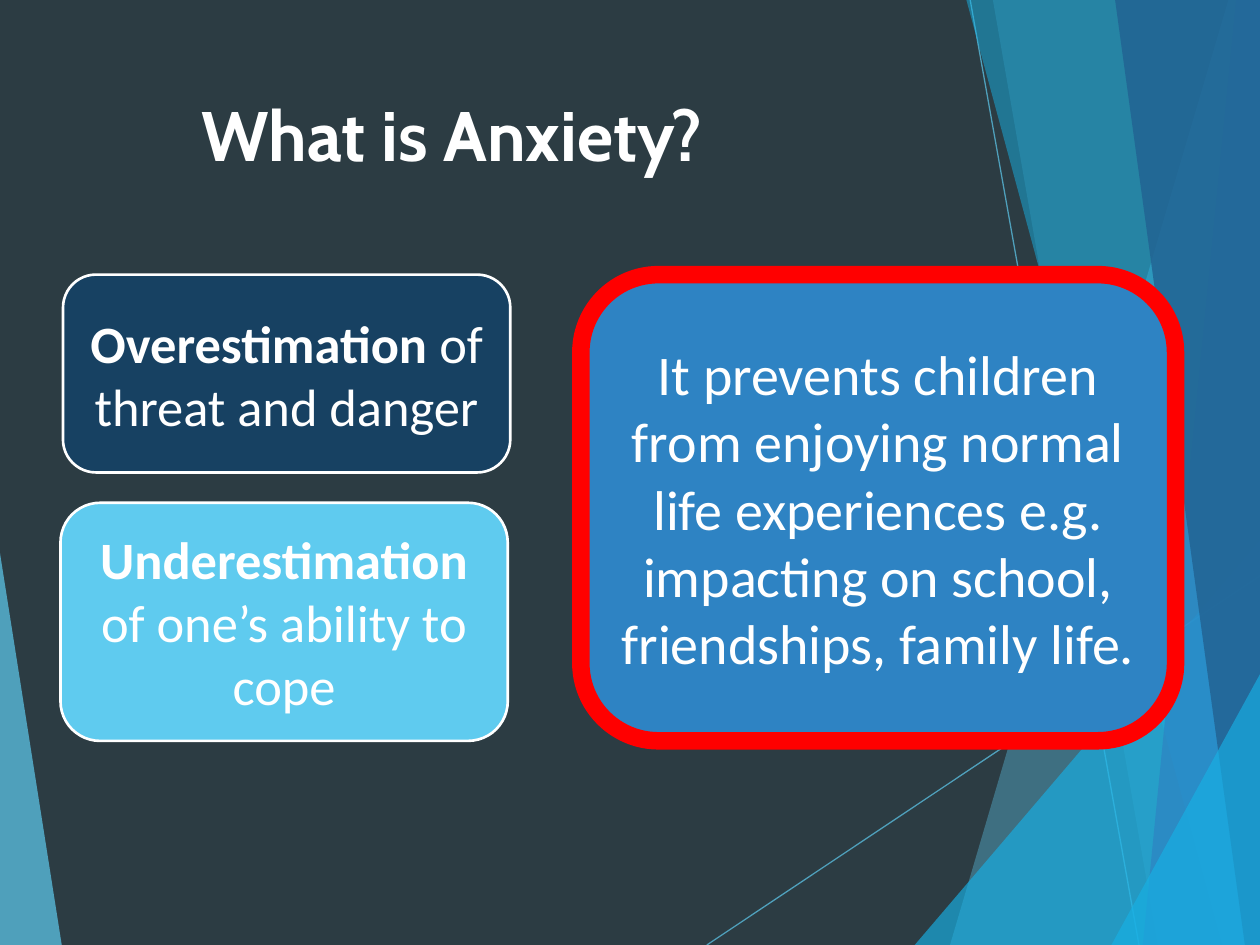
from lxml import etree
from pptx import Presentation
from pptx.dml.color import RGBColor
from pptx.enum.shapes import MSO_CONNECTOR, MSO_SHAPE
from pptx.enum.text import MSO_ANCHOR, PP_ALIGN
from pptx.oxml.ns import qn
from pptx.util import Inches, Pt

STRAIGHT = MSO_CONNECTOR.STRAIGHT
ROUNDED = MSO_SHAPE.ROUNDED_RECTANGLE
TOP, MIDDLE = MSO_ANCHOR.TOP, MSO_ANCHOR.MIDDLE
LEFT, CENTER = PP_ALIGN.LEFT, PP_ALIGN.CENTER

SLATE = RGBColor(0x2C, 0x3C, 0x43)
SKY = RGBColor(0x5F, 0xCB, 0xEF)
CYAN = RGBColor(0x17, 0xB0, 0xE4)
BLUE = RGBColor(0x2E, 0x83, 0xC3)
DEEP_BLUE = RGBColor(0x22, 0x62, 0x92)
NAVY = RGBColor(0x17, 0x41, 0x62)
RED = RGBColor(0xFF, 0x00, 0x00)
WHITE = RGBColor(0xFF, 0xFF, 0xFF)

WIDTH, HEIGHT = 10, 7.5
RAYS = [((5.61, HEIGHT), (WIDTH, 4.57)), ((7.7, 0), (9.04, HEIGHT))]
FACETS = [
    ([(0, 4.39), (0.49, HEIGHT), (0, HEIGHT)], SKY, 70),
    ([(9.75, 0), (7.54, HEIGHT), (WIDTH, HEIGHT), (WIDTH, 0)], SKY, 36),
    ([(7.88, 0), (9.19, HEIGHT), (WIDTH, HEIGHT), (WIDTH, 0)], SKY, 20),
    ([(7.26, HEIGHT), (WIDTH, 4.29), (WIDTH, HEIGHT)], CYAN, 66),
    ([(7.67, 0), (9.7, HEIGHT), (WIDTH, HEIGHT), (WIDTH, 0)], CYAN, 50),
    ([(9.81, 0), (9.07, HEIGHT), (WIDTH, HEIGHT), (WIDTH, 0)], BLUE, 70),
    ([(8.85, 0), (9.88, HEIGHT), (WIDTH, HEIGHT), (WIDTH, 0)], DEEP_BLUE, 82),
    ([(8.82, HEIGHT), (WIDTH, 5.35), (WIDTH, HEIGHT)], CYAN, 66),
]
CARDS = [
    ((0.5, 2.18, 3.55, 1.57), NAVY, WHITE, 1.5, 30,
     [[("Overestimation ", True), ("of threat and danger", False)]]),
    ((0.48, 3.99, 3.55, 1.89), SKY, WHITE, 1.5, 30,
     [[("Underestimation ", True), ("of one’s ability to cope", False)]]),
    ((4.61, 2.18, 4.72, 3.7), BLUE, RED, 10, 32,
     [[("It prevents children from enjoying normal life experiences e.g. "
        "impacting on school,", False)],
      [("friendships, family life.", False)]]),
]


def set_opacity(shape, percent):
    """Make the only colour of a shape or connector partly transparent."""
    color = next(shape._element.spPr.iter(qn("a:srgbClr")))
    etree.SubElement(color, qn("a:alpha"), val=str(percent * 1000))


def style_run(run, font_name, size, bold):
    """Give a run its white font."""
    run.font.name = font_name
    run.font.size = Pt(size)
    run.font.bold = bold
    run.font.color.rgb = WHITE


def add_facet(slide, points, color, opacity):
    """Draw one translucent polygon of the background."""
    corners = [(Inches(x), Inches(y)) for x, y in points]
    builder = slide.shapes.build_freeform(*corners[0])
    builder.add_line_segments(corners[1:], close=True)
    shape = builder.convert_to_shape()
    shape.shadow.inherit = False
    shape.fill.solid()
    shape.fill.fore_color.rgb = color
    shape.line.fill.background()
    set_opacity(shape, opacity)


def add_ray(slide, start, end):
    """Draw one thin translucent line of the background."""
    ray = slide.shapes.add_connector(
        STRAIGHT, *(Inches(value) for value in start + end))
    ray.line.color.rgb = SKY
    ray.line.width = Pt(0.75)
    set_opacity(ray, 70)
    etree.SubElement(ray._element.spPr, qn("a:effectLst"))


def add_background(slide):
    """Fill the slide and lay the facets and rays over it."""
    slide.background.fill.solid()
    slide.background.fill.fore_color.rgb = SLATE
    add_facet(slide, *FACETS[0])
    for start, end in RAYS:
        add_ray(slide, start, end)
    for facet in FACETS[1:]:
        add_facet(slide, *facet)


def place_title(slide, box, text):
    """Move and format the title placeholder."""
    title = slide.shapes.title
    title.left, title.top, title.width, title.height = map(Inches, box)
    title.text_frame.text = text
    title.text_frame.vertical_anchor = TOP
    paragraph = title.text_frame.paragraphs[0]
    paragraph.alignment = LEFT
    style_run(paragraph.runs[0], "Cabin", 40, True)


def add_card(slide, box, fill, outline, outline_width, size, paragraphs):
    """Draw a rounded card with centred text."""
    card = slide.shapes.add_shape(ROUNDED, *map(Inches, box))
    card.shadow.inherit = False
    card.fill.solid()
    card.fill.fore_color.rgb = fill
    card.line.color.rgb = outline
    card.line.width = Pt(outline_width)
    frame = card.text_frame
    frame.word_wrap = True
    frame.vertical_anchor = MIDDLE
    for index, parts in enumerate(paragraphs):
        paragraph = frame.add_paragraph() if index else frame.paragraphs[0]
        paragraph.alignment = CENTER
        for text, bold in parts:
            run = paragraph.add_run()
            run.text = text
            style_run(run, "Calibri", size, bold)


def main():
    """Build and save the presentation."""
    presentation = Presentation()
    presentation.slide_width = Inches(WIDTH)
    presentation.slide_height = Inches(HEIGHT)
    slide = presentation.slides.add_slide(presentation.slide_layouts[5])
    add_background(slide)
    place_title(slide, (1.5, 0.68, 5.08, 1.26), "What is Anxiety?")
    for card in CARDS:
        add_card(slide, *card)
    presentation.save("out.pptx")


if __name__ == "__main__":
    main()
